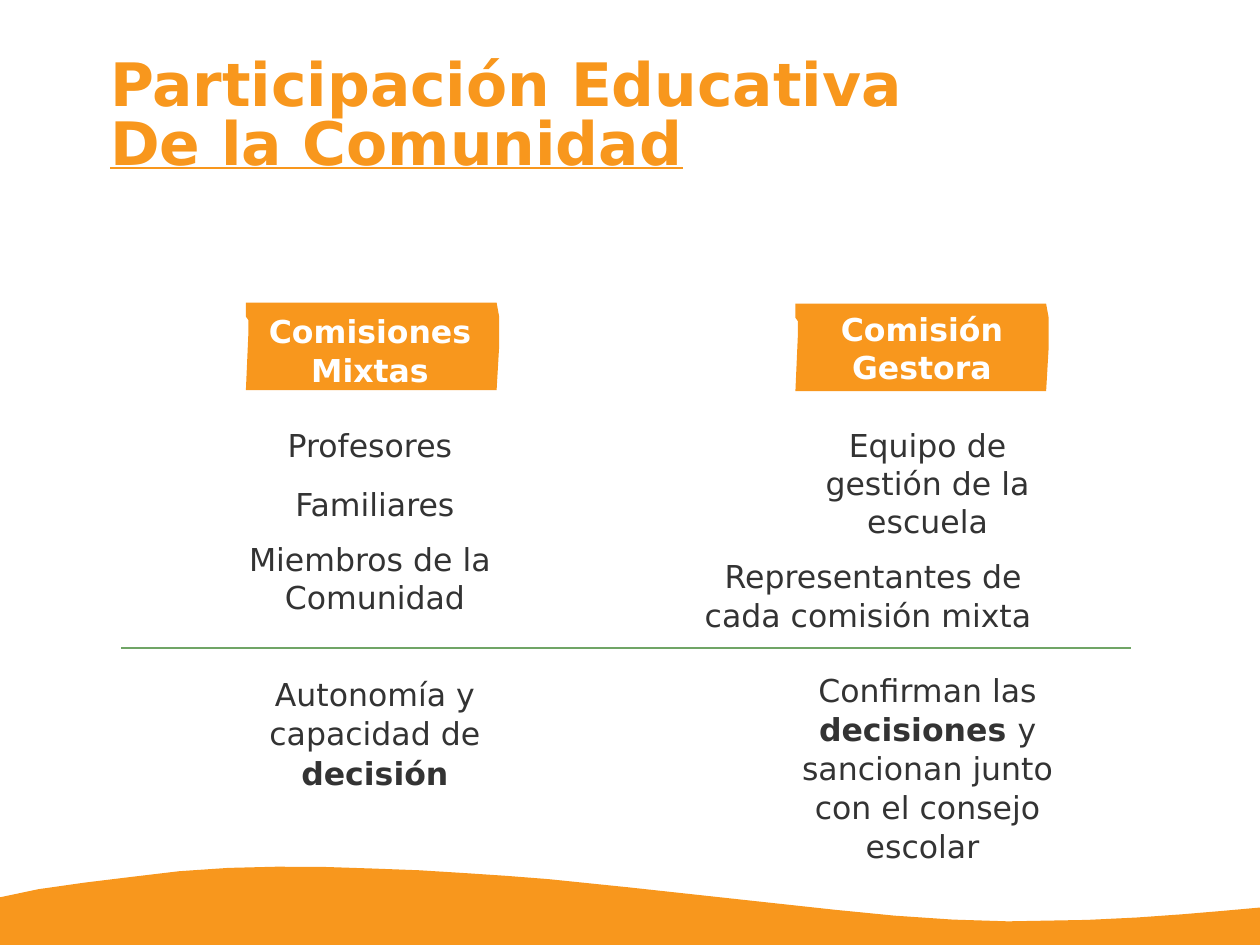
from lxml import etree
from pptx import Presentation
from pptx import util as u
from pptx.dml.color import RGBColor
from pptx.enum import shapes, text
from pptx.oxml import ns

ORANGE = RGBColor(0xF8, 0x97, 0x1D)
GREEN = RGBColor(0x70, 0xA5, 0x66)
GREY = RGBColor(0x33, 0x33, 0x33)
WHITE = RGBColor(0xFF, 0xFF, 0xFF)
FONT = "DejaVu Sans"

WIDTH, HEIGHT = u.Inches(11.11), u.Inches(8.33)
LINE, LOOSE_LINE = 24.3, 24.9  # points
INDENT = 8.64  # columns

# Outlines: the wave in columns and rows, the tag in shares of its own size
WAVE = [(0, 94.96), (3.06, 94.1), (6.75, 93.4), (10.44, 92.8), (14.22, 92.2),
        (18.1, 91.85), (21.96, 91.72), (25.83, 91.75), (29.7, 91.92),
        (33.3, 92.1), (36.9, 92.4), (40.3, 92.7), (43.56, 93.04),
        (49.86, 93.9), (66.25, 96.28), (71, 96.9), (75.6, 97.32), (80, 97.5),
        (82.2, 97.45), (86.3, 97.35), (90.2, 97.1), (93.8, 96.76),
        (97, 96.4), (100, 96.04), (100, 100), (0, 100)]
TAG = [(0, 0), (0, 0.16), (0.01, 0.2), (0.01, 0.35), (0, 1),
       (0.99, 1), (1, 0.5), (1, 0.16), (0.99, 0)]
TAG_SIZE = (20.1, 9.25)


def col(n):
    """Length of n columns; the slide is 100 columns wide."""
    return round(WIDTH * n / 100)


def row(n):
    """Length of n rows; the slide is 100 rows high."""
    return round(HEIGHT * n / 100)


def add_outline(s, points):
    """Draw an orange closed outline behind the text of the slide."""
    start, *rest = [(col(x), row(y)) for x, y in points]
    builder = s.shapes.build_freeform(*start)
    builder.add_line_segments(rest, close=True)
    sp = builder.convert_to_shape()
    sp.shadow.inherit = False
    sp.fill.solid()
    sp.fill.fore_color.rgb = ORANGE
    sp.line.fill.background()
    s.shapes.element.insert(2, sp.element)


def add_tag(s, left, top):
    w, h = TAG_SIZE
    add_outline(s, [(left + x * w, top + y * h) for x, y in TAG])


def add_divider(s, left, right, top):
    line = s.shapes.add_connector(shapes.MSO_CONNECTOR.STRAIGHT,
                                  col(left), row(top), col(right), row(top))
    line.line.color.rgb = GREEN
    line.line.width = u.Pt(1)
    etree.SubElement(line.element.spPr, ns.qn("a:effectLst"))


def place(sp, left, top, width, height):
    """Move a placeholder, clear its margins and return its text frame."""
    sp.left, sp.top = col(left), row(top)
    sp.width, sp.height = col(width), row(height)
    tf = sp.text_frame
    tf.margin_left = tf.margin_right = tf.margin_top = tf.margin_bottom = 0
    tf.vertical_anchor = text.MSO_ANCHOR.TOP
    tf.auto_size = text.MSO_AUTO_SIZE.NONE
    tf.word_wrap = True
    return tf


def add_paragraph(tf, line, before=0, indent=0, align=text.PP_ALIGN.CENTER):
    p = tf.paragraphs[0]
    if p.runs:
        p = tf.add_paragraph()
    p.alignment = align
    p.line_spacing = u.Pt(line)
    p.space_before, p.space_after = u.Pt(before), u.Pt(0)
    pPr = p._p.get_or_add_pPr()
    pPr.set("marL", str(col(indent)))
    pPr.set("indent", "0")
    etree.SubElement(pPr, ns.qn("a:buNone"))
    return p


def add_run(p, words, color=GREY, size=20, bold=False, underline=False):
    r = p.add_run()
    r.text = words
    r.font.name, r.font.size = FONT, u.Pt(size)
    r.font.bold, r.font.underline = bold, underline
    r.font.color.rgb = color


def fill_title(sp):
    tf = place(sp, 8.73, 5.16, 82.7, 13.6)
    for words, line, underline in [("Participación Educativa", 44.1, False),
                                   ("De la Comunidad", 37.5, True)]:
        p = add_paragraph(tf, line, align=text.PP_ALIGN.LEFT)
        add_run(p, words, ORANGE, 38, True, underline)


def fill_heading(sp, words, left, top):
    tf = place(sp, left, top, 20, 8.5)
    add_run(add_paragraph(tf, LINE), words, WHITE, bold=True)


def fill_body(sp, left, width, paragraphs):
    """Each paragraph is line height, space before, indent and (words, bold) runs."""
    tf = place(sp, left, 45, width, 46)
    for line, before, indent, runs in paragraphs:
        p = add_paragraph(tf, line, before, indent)
        for words, bold in runs:
            add_run(p, words, bold=bold)


def main():
    prs = Presentation()
    prs.slide_width, prs.slide_height = WIDTH, HEIGHT
    s = prs.slides.add_slide(prs.slide_layouts.get_by_name("Comparison"))
    title, left_head, left_body, right_head, right_body = s.placeholders

    add_tag(s, 19.52, 32.02)
    add_tag(s, 63.13, 32.14)
    add_outline(s, WAVE)
    add_divider(s, 9.63, 89.74, 68.6)

    fill_title(title)
    fill_heading(left_head, "Comisiones Mixtas", 19.37, 33)
    fill_heading(right_head, "Comisión Gestora", 63.17, 32.7)
    fill_body(left_body, 19.26, 21, [
        (LINE, 0, 0, [("Profesores ", False)]),
        (LINE, 13.2, 0, [("Familiares", False)]),
        (LINE, 10.6, 0, [("Miembros de la ", False)]),
        (LINE, 0, 0, [("Comunidad", False)]),
        (LOOSE_LINE, 36.7, 0, [("Autonomía y capacidad de ", False),
                               ("decisión", True)]),
    ])
    fill_body(right_body, 54.45, 29.7, [
        (LINE, 0, INDENT, [("Equipo de gestión de la escuela", False)]),
        (LINE, 10.6, 0, [("Representantes de cada comisión mixta ", False)]),
        (LOOSE_LINE, 22.7, INDENT, [
            ("Confirman las ", False), ("decisiones ", True),
            ("y sancionan junto con el consejo escolar ", False)]),
    ])
    prs.save("out.pptx")


if __name__ == "__main__":
    main()
